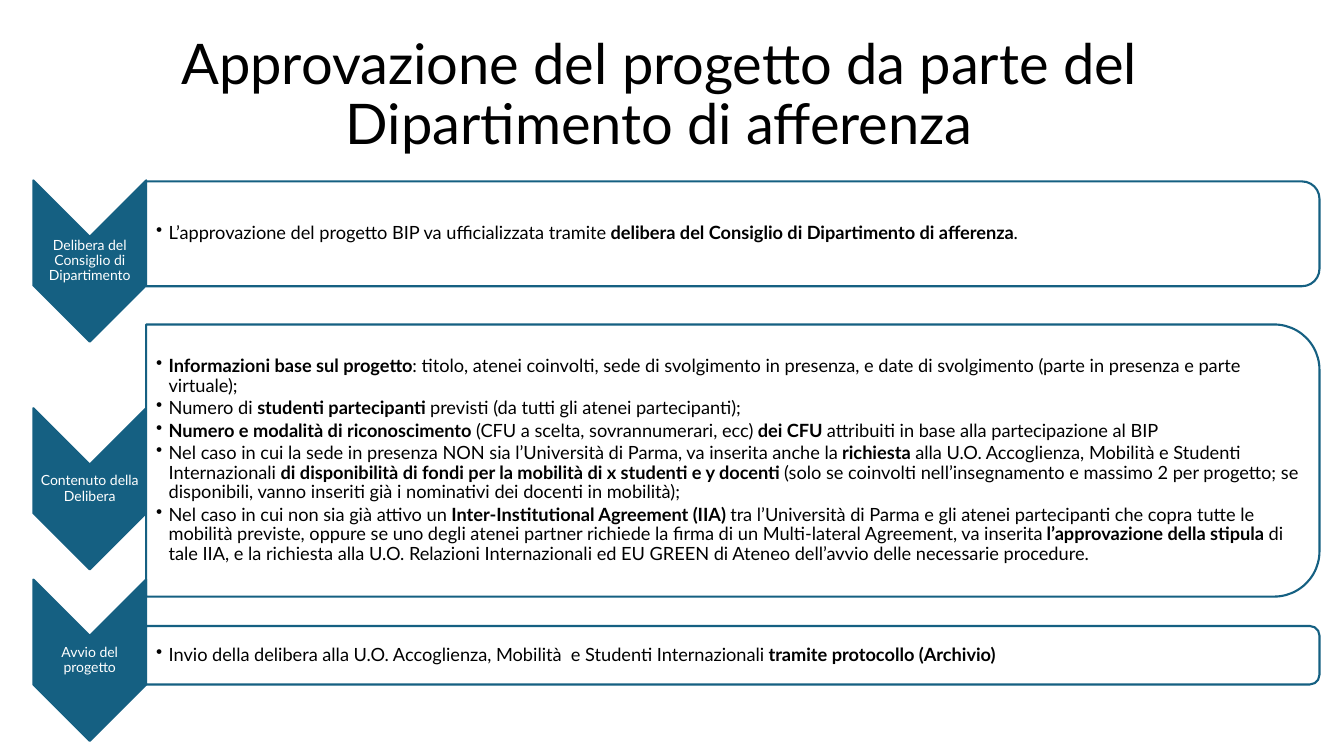
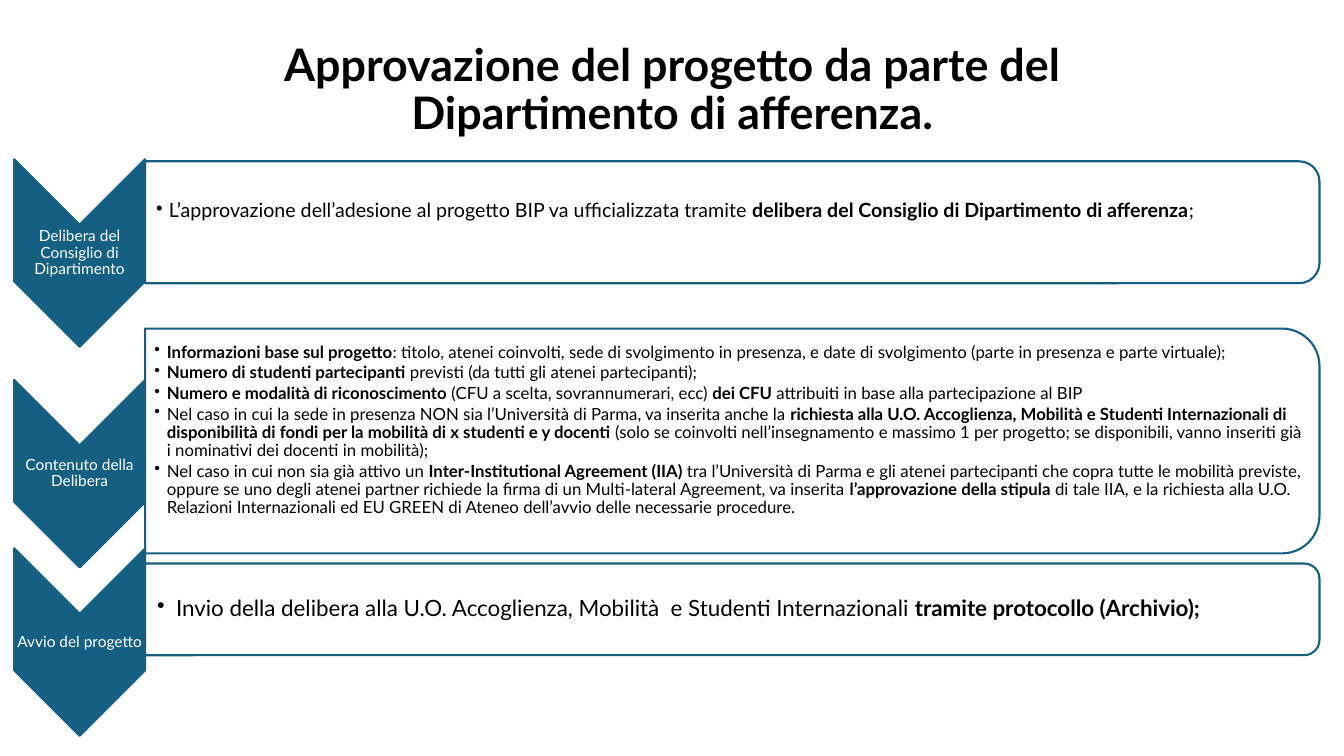
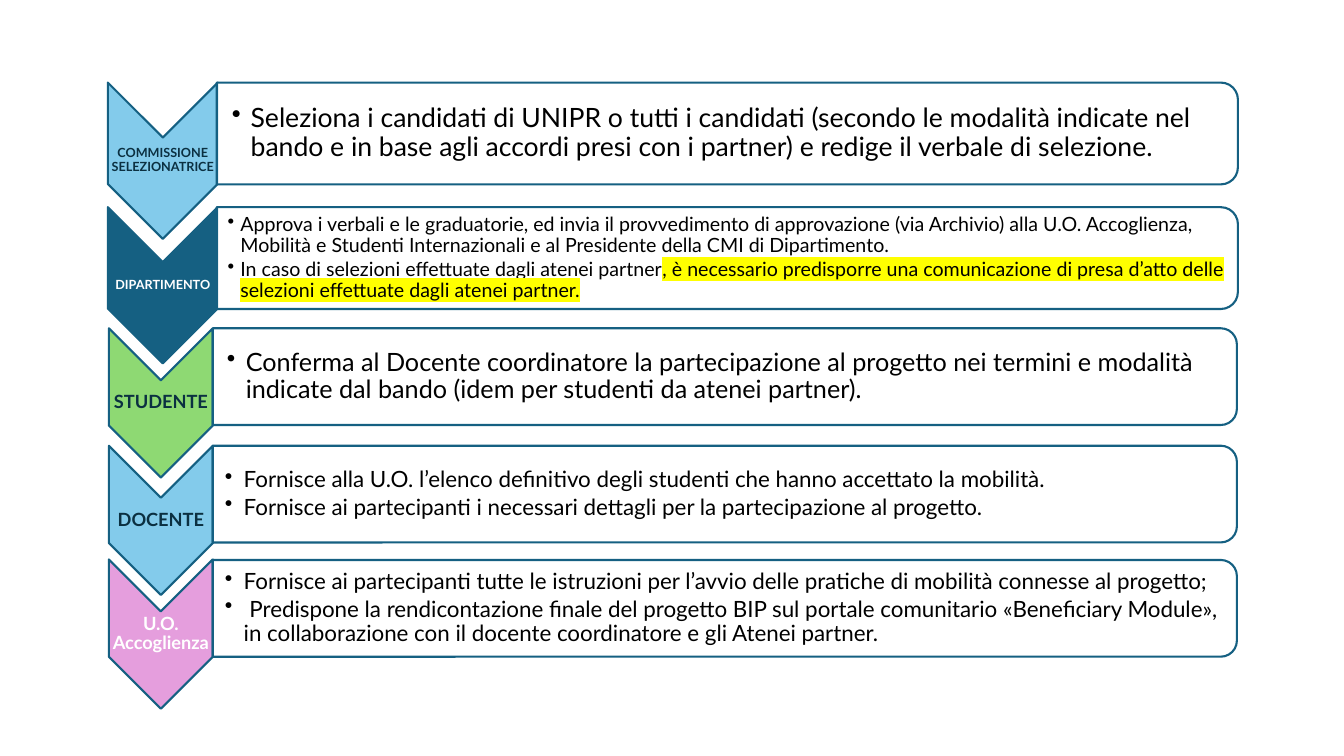
from dataclasses import dataclass

from lxml.etree import SubElement
from pptx import Presentation
from pptx.dml.color import RGBColor
from pptx.enum.shapes import MSO_SHAPE
from pptx.enum.text import MSO_ANCHOR, MSO_AUTO_SIZE, PP_ALIGN
from pptx.oxml.ns import qn
from pptx.util import Pt

# Shared look
COLORS = {
    "white": "FFFFFF", "black": "000000", "navy": "0B3041", "teal": "156082",
    "sky": "83CBEB", "green": "8ED973", "pink": "E59EDD", "yellow": "FFFF00",
}
FONT = "Lato"
LINE_SPACING = 0.9
CORNER_INSET = 0.0488  # room that a rounded corner takes, per unit of panel height
FRAME = {"word_wrap": True, "auto_size": MSO_AUTO_SIZE.NONE,
         "vertical_anchor": MSO_ANCHOR.MIDDLE}
MARGINS = {f"margin_{side}": Pt(0.7) for side in ("left", "top", "right", "bottom")}


@dataclass
class Column:
    """Horizontal places shared by the stages, and the chevron height."""
    chevron_left: float
    chevron_width: float
    chevron_height: float
    panel_left: float
    panel_width: float


@dataclass
class Stage:
    """One chevron with its panel; ** encloses emphasised words."""
    label: str
    chevron_top: float
    panel_top: float
    panel_height: float
    points: list
    size: float
    label_size: float
    margin: float = 7.2
    indent: float = 9
    bottom: float = 0.7
    fill: str = "teal"
    label_color: str = "white"
    label_bold: bool = False
    emphasis: str = "bold"


def rgb(name):
    return RGBColor.from_string(COLORS[name])


def apply(target, values):
    for name, value in values.items():
        setattr(target, name, value)


def add_run(paragraph, text, size, color, bold=False, highlight=False):
    run = paragraph.add_run()
    run.text = text
    apply(run.font, {"name": FONT, "size": Pt(size), "bold": bold})
    run.font.color.rgb = rgb(color)
    if highlight:
        mark = run._r.get_or_add_rPr().makeelement(qn("a:highlight"), {})
        SubElement(mark, qn("a:srgbClr"), val=COLORS["yellow"])
        run.font.fill._xPr.find(qn("a:solidFill")).addnext(mark)


def add_title(slide, text, left, top, width, height, size, bold=False):
    title = slide.shapes.title
    apply(title, {"left": Pt(left), "top": Pt(top),
                  "width": Pt(width), "height": Pt(height)})
    apply(title.text_frame, FRAME)
    paragraph = title.text_frame.paragraphs[0]
    apply(paragraph, {"alignment": PP_ALIGN.CENTER, "line_spacing": LINE_SPACING})
    add_run(paragraph, text, size, "black", bold)


def add_turned_shape(slide, preset, left, top, width, height, fill, alpha=None):
    """Place a preset, turned by 90 degrees, so that it covers the given area."""
    shift = (width - height) / 2
    shape = slide.shapes.add_shape(preset, Pt(left + shift), Pt(top - shift),
                                   Pt(height), Pt(width))
    shape.rotation = 90
    shape.shadow.inherit = False
    shape.fill.solid()
    shape.fill.fore_color.rgb = rgb(fill)
    shape.line.color.rgb = rgb("teal")
    shape.line.width = Pt(1.5)
    if alpha:
        color = shape._element.spPr.find(qn("a:solidFill"))[0]
        SubElement(color, qn("a:alpha"), val=str(alpha * 1000))


def add_text_frame(slide, left, top, width, height, margins):
    box = slide.shapes.add_textbox(Pt(left), Pt(top), Pt(width), Pt(height))
    apply(box.text_frame, {**FRAME, **MARGINS, **margins})
    return box.text_frame


def add_label(slide, column, stage):
    # The label fills the part of the chevron between notch and tip
    width = column.chevron_width
    frame = add_text_frame(slide, column.chevron_left, stage.chevron_top + width / 2,
                           width, column.chevron_height - width, {})
    paragraph = frame.paragraphs[0]
    apply(paragraph, {"alignment": PP_ALIGN.CENTER, "line_spacing": LINE_SPACING,
                      "space_after": Pt(0.35 * stage.label_size)})
    add_run(paragraph, stage.label, stage.label_size, stage.label_color, stage.label_bold)


def add_points(slide, column, stage):
    inset = stage.panel_height * CORNER_INSET
    frame = add_text_frame(
        slide, column.panel_left, stage.panel_top + inset,
        column.panel_width - inset, stage.panel_height - 2 * inset,
        {"margin_left": Pt(stage.margin), "margin_bottom": Pt(stage.bottom)})
    for number, point in enumerate(stage.points):
        paragraph = frame.add_paragraph() if number else frame.paragraphs[0]
        properties = paragraph._p.get_or_add_pPr()
        properties.set("marL", str(Pt(stage.indent)))
        properties.set("indent", str(-Pt(stage.indent)))
        SubElement(properties, qn("a:buChar"), char="•")
        apply(paragraph, {"line_spacing": LINE_SPACING,
                          "space_after": Pt(0.15 * stage.size)})
        for part, words in enumerate(point.split("**")):
            if words:
                add_run(paragraph, words, stage.size, "black",
                        **{stage.emphasis: part % 2 == 1})


def add_stage(slide, column, stage):
    add_turned_shape(slide, MSO_SHAPE.CHEVRON, column.chevron_left, stage.chevron_top,
                     column.chevron_width, column.chevron_height, stage.fill)
    add_label(slide, column, stage)
    add_turned_shape(slide, MSO_SHAPE.ROUND_2_SAME_RECTANGLE, column.panel_left,
                     stage.panel_top, column.panel_width, stage.panel_height,
                     "white", alpha=90)
    add_points(slide, column, stage)


# Wording used on both approval slides
TITLE = "Approvazione del progetto da parte del Dipartimento di afferenza"
COUNCIL = "Delibera del Consiglio di Dipartimento"
CONTENT = "Contenuto della Delibera"
START = "Avvio del progetto"
BY_RESOLUTION = ("va ufficializzata tramite "
                 "**delibera del Consiglio di Dipartimento di afferenza**")
SENDING = ("Invio della delibera alla U.O. Accoglienza, Mobilità  e Studenti "
           "Internazionali **tramite protocollo (Archivio)")


def content_points(participants, funding, teachers):
    return [
        "**Informazioni base sul progetto**: titolo, atenei coinvolti, sede di svolgimento "
        "in presenza, e date di svolgimento (parte in presenza e parte virtuale);",
        f"{participants}previsti (da tutti gli atenei partecipanti);",
        "**Numero e modalità di riconoscimento** (CFU a scelta, sovrannumerari, ecc) "
        "**dei CFU **attribuiti in base alla partecipazione al BIP",
        "Nel caso in cui la sede in presenza NON sia l’Università di Parma, va inserita "
        f"anche la {funding} (solo se coinvolti nell’insegnamento e massimo {teachers} per "
        "progetto; se disponibili, vanno inseriti già i nominativi dei docenti in mobilità);",
        "Nel caso in cui non sia già attivo un **Inter-Institutional Agreement (IIA) **tra "
        "l’Università di Parma e gli atenei partecipanti che copra tutte le mobilità "
        "previste, oppure se uno degli atenei partner richiede la firma di un Multi-lateral "
        "Agreement, va inserita **l’approvazione della stipula** di tale IIA, e la richiesta "
        "alla U.O. Relazioni Internazionali ed EU GREEN di Ateneo dell’avvio delle "
        "necessarie procedure.",
    ]


def project_approval(slide):
    add_title(slide, TITLE, 56.9, 16.6, 828, 104.4, 40)
    column = Column(23.8, 80.6, 115.2, 104.4, 838.1)
    points = content_points(
        "Numero di **studenti partecipanti **",
        "**richiesta** alla U.O. Accoglienza, Mobilità e Studenti Internazionali "
        "**di disponibilità di fondi per la mobilità di x studenti e y docenti**", 2)
    for stage in (
        Stage(COUNCIL, 128.9, 129.6, 74.9,
              [f"L’approvazione del progetto BIP {BY_RESOLUTION}."], 13, 10),
        Stage(CONTENT, 291.6, 231.8, 194.4, points, 13, 10),
        Stage(START, 414, 447.1, 41.8, [SENDING], 13, 10),
    ):
        add_stage(slide, column, stage)


def joining_approval(slide):
    add_title(slide, f"{TITLE}.", 108, 29.5, 744.5, 70.6, 32, bold=True)
    column = Column(10.1, 93.6, 133.9, 103.7, 838.8)
    points = content_points(
        "**Numero di studenti partecipanti **",
        "**richiesta alla U.O. Accoglienza, Mobilità e Studenti Internazionali di "
        "disponibilità di fondi per la mobilità di x studenti e y docenti**", 1)
    for stage in (
        Stage(COUNCIL, 113.8, 115.2, 87.1,
              [f"L’approvazione dell’adesione al progetto BIP {BY_RESOLUTION};"],
              14, 11, margin=7.9, bottom=16),
        Stage(CONTENT, 271.4, 234.7, 160.6, points, 12, 11, margin=6.5, bottom=16),
        Stage(START, 391.7, 402.5, 65.5, [f"{SENDING};"], 16, 11, margin=8.6, indent=13.5),
    ):
        add_stage(slide, column, stage)


def selection_steps(slide):
    upper = Column(77, 78.5, 111.6, 154.8, 729.4)
    lower = Column(77.8, 74.2, 106.6, 152, 731.5)
    dark_label = {"label_color": "navy", "label_bold": True}
    for column, stage in (
        (upper, Stage(
            "COMMISSIONE SELEZIONATRICE", 59, 59, 72.7,
            ["Seleziona i candidati di UNIPR o tutti i candidati (secondo le modalità "
             "indicate nel bando e in base agli accordi presi con i partner) e redige il "
             "verbale di selezione."],
            19, 9, margin=10.8, indent=13.5, fill="sky", **dark_label)),
        (upper, Stage(
            "DIPARTIMENTO", 148, 148, 72.7,
            ["Approva i verbali e le graduatorie, ed invia il provvedimento di approvazione "
             "(via Archivio) alla U.O. Accoglienza, Mobilità e Studenti Internazionali e al "
             "Presidente della CMI di Dipartimento.",
             "In caso di selezioni effettuate dagli atenei partner**, è necessario "
             "predisporre una comunicazione di presa d’atto delle selezioni effettuate "
             "dagli atenei partner."],
            14, 9, margin=7.9, label_bold=True, emphasis="highlight")),
        (lower, Stage(
            "STUDENTE", 234.5, 234.5, 69.1,
            ["Conferma al Docente coordinatore la partecipazione al progetto nei termini e "
             "modalità indicate dal bando (idem per studenti da atenei partner)."],
            18, 13, margin=10.1, indent=13.5, fill="green", **dark_label)),
        (lower, Stage(
            "DOCENTE", 318.4, 318.4, 69.1,
            ["Fornisce alla U.O. l’elenco definitivo degli studenti che hanno accettato la "
             "mobilità.",
             "Fornisce ai partecipanti i necessari dettagli per la partecipazione al "
             "progetto."],
            16, 13, margin=8.6, indent=13.5, fill="sky", **dark_label)),
        (lower, Stage(
            "U.O. Accoglienza", 399.6, 400, 69.1,
            ["Fornisce ai partecipanti tutte le istruzioni per l’avvio delle pratiche di "
             "mobilità connesse al progetto;",
             " Predispone la rendicontazione finale del progetto BIP sul portale comunitario "
             "«Beneficiary Module», in collaborazione con il docente coordinatore e gli "
             "Atenei partner."],
            16, 13, margin=8.6, indent=13.5, fill="pink", label_bold=True)),
    ):
        add_stage(slide, column, stage)


def main():
    deck = Presentation()
    apply(deck, {"slide_width": Pt(960), "slide_height": Pt(540)})
    title_only, blank = deck.slide_layouts[5], deck.slide_layouts[6]
    for build, layout in ((project_approval, title_only), (joining_approval, title_only),
                          (selection_steps, blank)):
        build(deck.slides.add_slide(layout))
    deck.save("out.pptx")


if __name__ == "__main__":
    main()
